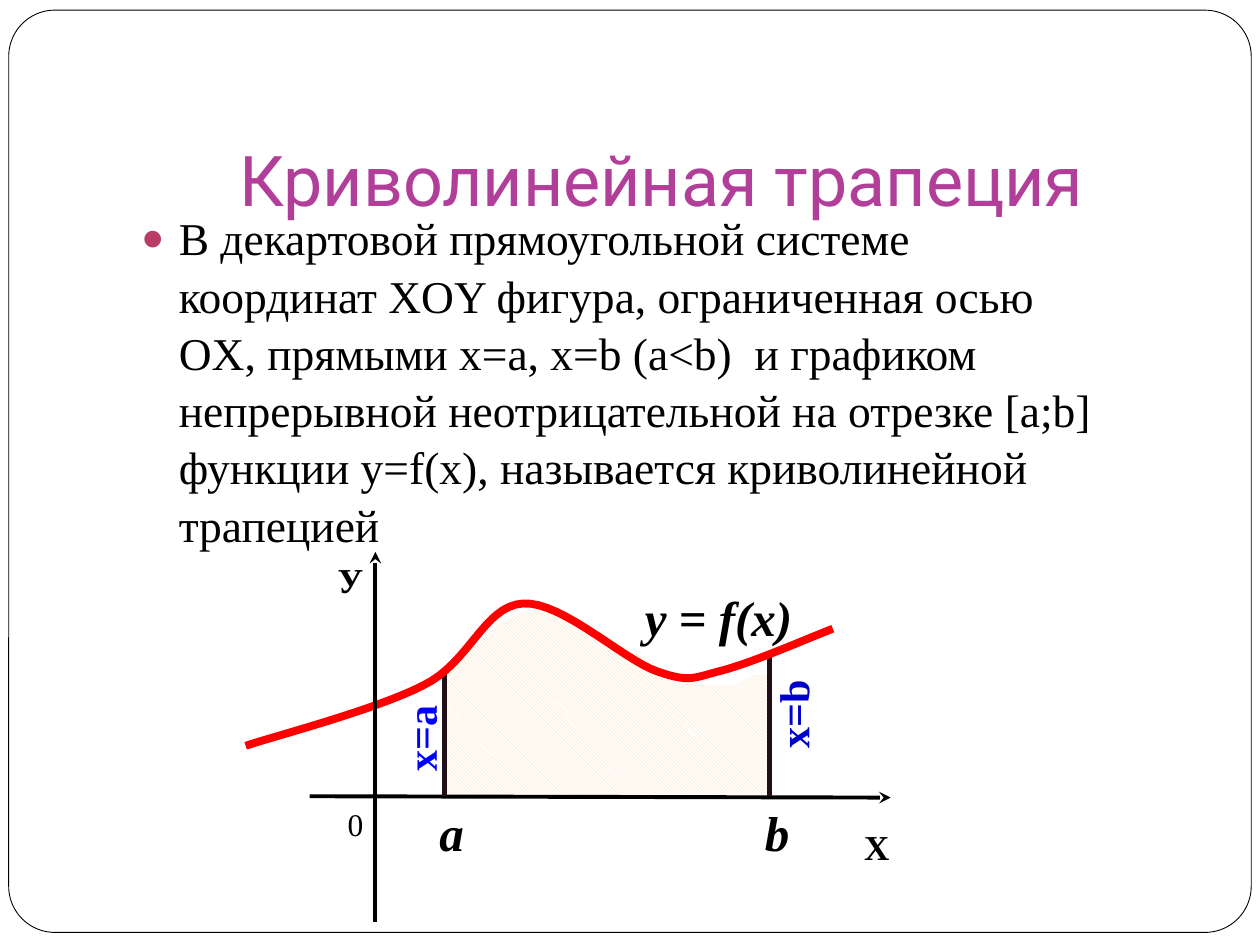
from lxml.etree import SubElement
from pptx import Presentation
from pptx.dml.color import RGBColor
from pptx.enum.dml import MSO_PATTERN
from pptx.enum.shapes import MSO_CONNECTOR, MSO_SHAPE
from pptx.enum.text import MSO_ANCHOR, MSO_AUTO_SIZE as AutoSize, PP_ALIGN
from pptx.oxml.ns import qn
from pptx.util import Pt

SERIF = "Times New Roman"
BLACK = "000000"
DEFINITION = (
    "В декартовой прямоугольной системе координат XOY фигура, "
    "ограниченная осью OX, прямыми x=a, x=b (a<b)  и графиком "
    "непрерывной неотрицательной на отрезке [a;b] функции y=f(x), "
    "называется криволинейной трапецией"
)
AXIS_Y, LEFT_BOUND, RIGHT_BOUND = 455, 254.2, 439.9
REGION = [
    (LEFT_BOUND, AXIS_Y), (LEFT_BOUND, 391.7), (LEFT_BOUND, 385.9),
    (264.2, 375.8), (272.2, 368.6), (280.1, 360), (290.2, 354.2),
    (301, 349.2), (316.1, 349.2), (326.2, 354.2), (332.6, 358.6),
    (343.4, 363.6), (367.9, 375.8), (383, 385.9), (392.4, 388.8),
    (403.9, 391.7), (419.8, 391.7), (429.8, 385.9),
    (RIGHT_BOUND, 385.9), (RIGHT_BOUND, AXIS_Y),
]
CURVE_START = (140.4, 426.2)
CURVE_SPANS = [
    ((157.7, 420.5), (215.3, 405.4), (241.9, 391.7)),
    ((268.6, 378.7), (276.5, 346.3), (298.8, 344.9)),
    ((321.1, 343.4), (356.4, 377.3), (375.8, 383.8)),
    ((394.6, 390.2), (396, 387.4), (413.3, 383)),
    ((429.8, 378.7), (463, 364.3), (475.9, 359.3)),
]
MATH = {"size": Pt(28), "bold": True, "italic": True}
BOUND = {"size": Pt(24), "bold": True}
AXIS_NAME = {"size": Pt(20), "bold": True}


def rgb(value):
    return RGBColor.from_string(value)


def set_values(target, values):
    for name, value in values.items():
        setattr(target, name, value)


def place(part, left, top, width, height):
    set_values(part, {"left": Pt(left), "top": Pt(top),
                      "width": Pt(width), "height": Pt(height)})


def style_line(part, color, weight):
    part.line.color.rgb = rgb(color)
    part.line.width = Pt(weight)


def style_font(paragraph, color, values):
    set_values(paragraph.font, values)
    paragraph.font.color.rgb = rgb(color)


def add_frame(slide):
    frame = slide.shapes.add_shape(MSO_SHAPE.ROUNDED_RECTANGLE,
                                   Pt(5), Pt(5.8), Pt(710), Pt(527))
    frame.adjustments[0] = 0.05
    frame.shadow.inherit = False
    frame.fill.solid()
    frame.fill.fore_color.rgb = rgb("FFFFFF")
    style_line(frame, BLACK, 0.5)
    slide.shapes._spTree.insert(2, frame._element)


def fill_title(title):
    place(title, 72, 21.6, 612, 111.6)
    title.text = "Криволинейная трапеция"
    set_values(title.text_frame, {"vertical_anchor": MSO_ANCHOR.BOTTOM,
                                  "auto_size": AutoSize.NONE,
                                  "margin_bottom": Pt(7.2)})
    paragraph = title.text_frame.paragraphs[0]
    paragraph.alignment = PP_ALIGN.CENTER
    style_font(paragraph, "B13F9A", {"name": "Roboto", "size": Pt(40)})


def add_bullet(paragraph, color, percent, mark):
    props = paragraph._p.get_or_add_pPr()
    props.set("marL", str(Pt(21.6)))
    props.set("indent", str(Pt(-21.6)))
    SubElement(SubElement(props, qn("a:buClr")), qn("a:srgbClr"), val=color)
    SubElement(props, qn("a:buSzPct"), val=str(percent * 1000))
    SubElement(props, qn("a:buChar"), char=mark)


def fill_definition(body):
    place(body, 73.4, 115, 568, 360)
    body.text = DEFINITION
    body.text_frame.auto_size = AutoSize.NONE
    paragraph = body.text_frame.paragraphs[0]
    set_values(paragraph, {"space_before": Pt(0), "line_spacing": 1.05})
    add_bullet(paragraph, "B83D68", 85, "●")
    style_font(paragraph, BLACK, {"name": SERIF, "size": Pt(26)})


def add_outline(diagram, points, closed):
    start, *rest = [(Pt(x), Pt(y)) for x, y in points]
    builder = diagram.build_freeform(*start)
    builder.add_line_segments(rest, close=closed)
    outline = builder.convert_to_shape()
    outline.shadow.inherit = False
    return outline


def add_region(diagram):
    region = add_outline(diagram, REGION, True)
    region.fill.patterned()
    region.fill.pattern = MSO_PATTERN.LIGHT_DOWNWARD_DIAGONAL
    region.fill.fore_color.rgb = rgb("FCD8A2")
    region.fill.back_color.rgb = rgb("FFFFFF")
    region.line.fill.background()


def bezier(ends, t):
    weights = ((1 - t) ** 3, 3 * t * (1 - t) ** 2, 3 * t ** 2 * (1 - t), t ** 3)
    return tuple(sum(w * p[i] for w, p in zip(weights, ends)) for i in (0, 1))


def add_curve(diagram, steps=16):
    points = [CURVE_START]
    for span in CURVE_SPANS:
        ends = (points[-1], *span)
        points += [bezier(ends, step / steps) for step in range(1, steps + 1)]
    curve = add_outline(diagram, points, False)
    curve.fill.background()
    style_line(curve, "FF0000", 4.5)


def add_segment(diagram, start, end, color, weight, arrow=False):
    segment = diagram.add_connector(MSO_CONNECTOR.STRAIGHT,
                                    *map(Pt, (*start, *end)))
    style_line(segment, color, weight)
    if arrow:
        SubElement(segment.line._get_or_add_ln(), qn("a:tailEnd"), type="stealth")
    SubElement(segment._element.spPr, qn("a:effectLst"))


def add_label(diagram, text, box, values, color=BLACK, wrap=True, turn=0):
    label = diagram.add_textbox(*map(Pt, box))
    label.rotation = turn
    set_values(label.text_frame, {"text": text, "word_wrap": wrap,
                                  "auto_size": AutoSize.SHAPE_TO_FIT_TEXT})
    style_font(label.text_frame.paragraphs[0], color, {"name": SERIF, **values})


def add_diagram(slide):
    diagram = slide.shapes.add_group_shape().shapes
    add_region(diagram)
    add_segment(diagram, (177, AXIS_Y), (509, 455.8), BLACK, 2.25, arrow=True)
    add_label(diagram, "a", (244, 455, 26, 42.5), MATH, wrap=False)
    add_label(diagram, "b", (430, 455, 36.7, 42.5), MATH)
    add_label(diagram, " х=а", (205.2, 401, 69.8, 36), BOUND, "0000FF", turn=270)
    add_label(diagram, "x=b", (423.4, 390.2, 56.2, 33.1), BOUND, "0000CC",
              wrap=False, turn=270)
    for x, top in ((LEFT_BOUND, 381.6), (RIGHT_BOUND, 373)):
        add_segment(diagram, (x, AXIS_Y), (x, top), "210F17", 3)
    add_label(diagram, "0", (191.5, 456.5, 20.9, 30.2), {"size": Pt(18)})
    add_label(diagram, "y = f(x)", (361.4, 332, 116.6, 42.5), MATH)
    add_curve(diagram)
    add_segment(diagram, (214.5, 527), (214.5, 315.4), BLACK, 2.25, arrow=True)
    for name, left, top in (("Х", 486.7, 468), ("У", 185.8, 315.4)):
        add_label(diagram, name, (left, top, 29.5, 31.7), AXIS_NAME, wrap=False)


def main():
    deck = Presentation()
    set_values(deck, {"slide_width": Pt(720), "slide_height": Pt(540)})
    slide = deck.slides.add_slide(deck.slide_layouts[1])
    add_frame(slide)
    fill_title(slide.shapes.title)
    fill_definition(slide.placeholders[1])
    add_diagram(slide)
    deck.save("out.pptx")


if __name__ == "__main__":
    main()
